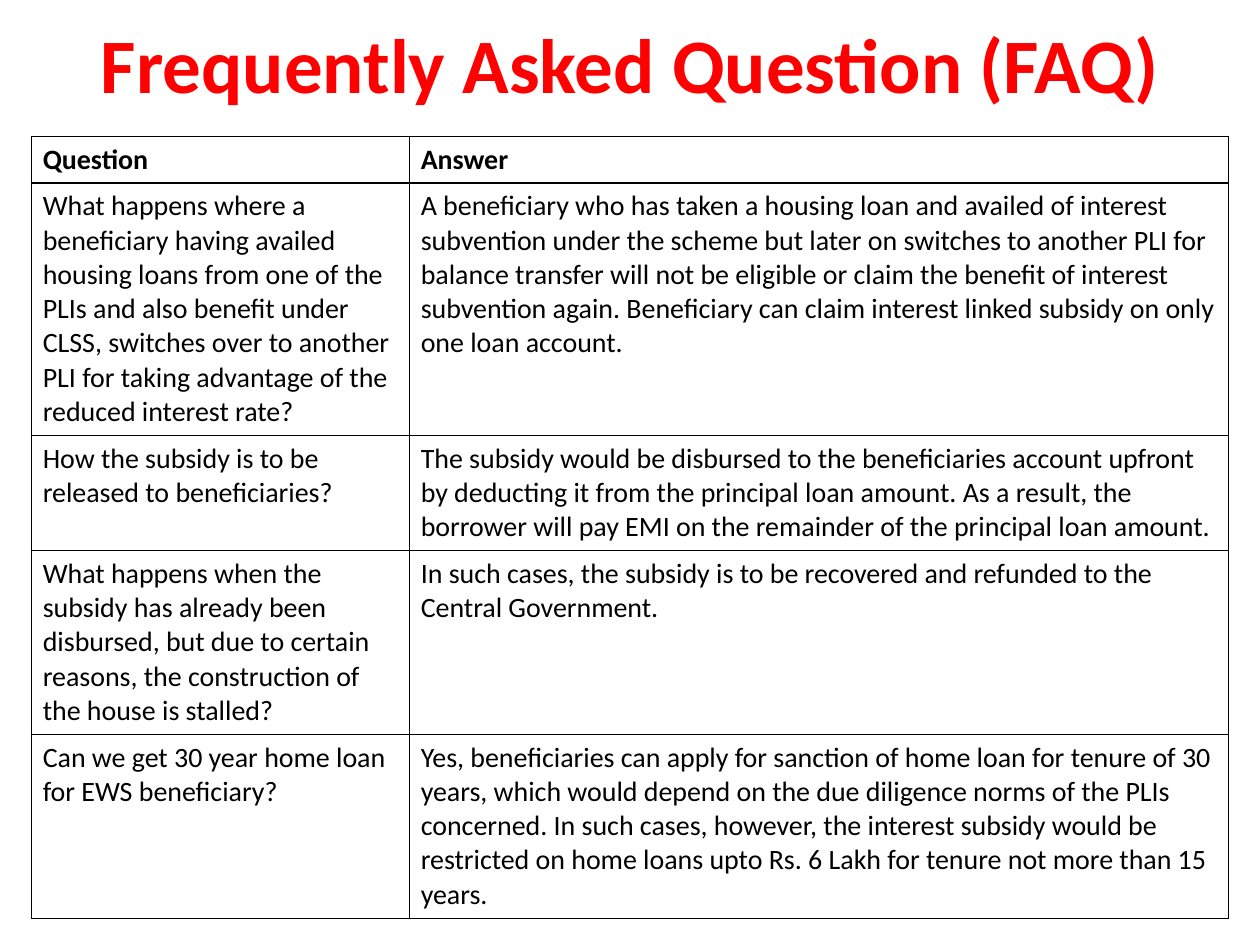
from dataclasses import dataclass

from lxml import etree
from pptx import Presentation, util as u
from pptx.dml.color import RGBColor
from pptx.enum import text
from pptx.oxml import ns


@dataclass(frozen=True)
class Theme:
    font: str = "Calibri"
    title_size: float = 44
    body_size: float = 16
    border_width: float = 0.75
    title_color: str = "FF0000"
    ink: str = "000000"
    paper: str = "FFFFFF"


theme = Theme()


def write(frame, words, size=theme.body_size, color=theme.ink, bold=False,
          align=text.PP_ALIGN.LEFT):
    frame.word_wrap = True
    para = frame.paragraphs[0]
    para.alignment = align
    span = para.add_run()
    span.text = words
    span.font.name = theme.font
    span.font.size = u.Pt(size)
    span.font.bold = bold
    span.font.color.rgb = RGBColor.from_string(color)


def add_borders(cell):
    properties = cell._tc.get_or_add_tcPr()
    for side in ("a:lnL", "a:lnR", "a:lnT", "a:lnB"):
        line = etree.SubElement(properties, ns.qn(side), w=str(u.Pt(theme.border_width)))
        fill = etree.SubElement(line, ns.qn("a:solidFill"))
        etree.SubElement(fill, ns.qn("a:srgbClr"), val=theme.ink)


faq = [
    ("Question", "Answer"),
    ("What happens where a beneficiary having availed housing loans from one of the PLIs "
     "and also benefit under CLSS, switches over to another PLI for taking advantage of "
     "the reduced interest rate?",
     "A beneficiary who has taken a housing loan and availed of interest subvention under "
     "the scheme but later on switches to another PLI for balance transfer will not be "
     "eligible or claim the benefit of interest subvention again. Beneficiary can claim "
     "interest linked subsidy on only one loan account."),
    ("How the subsidy is to be released to beneficiaries?",
     "The subsidy would be disbursed to the beneficiaries account upfront by deducting it "
     "from the principal loan amount. As a result, the borrower will pay EMI on the "
     "remainder of the principal loan amount."),
    ("What happens when the subsidy has already been disbursed, but due to certain "
     "reasons, the construction of the house is stalled?",
     "In such cases, the subsidy is to be recovered and refunded to the Central Government."),
    ("Can we get 30 year home loan for EWS beneficiary?",
     "Yes, beneficiaries can apply for sanction of home loan for tenure of 30 years, which "
     "would depend on the due diligence norms of the PLIs concerned. In such cases, however, "
     "the interest subsidy would be restricted on home loans upto Rs. 6 Lakh for tenure not "
     "more than 15 years."),
]
column_widths = [3, 6.5]
row_heights = [0.36, 1.96, 0.89, 1.42, 1.42]

deck = Presentation()
deck.slide_width, deck.slide_height = u.Inches(10), u.Inches(7.5)
page = deck.slides.add_slide(deck.slide_layouts.get_by_name("Title Only"))

title = page.shapes.title
title.left, title.top = u.Inches(0.17), u.Inches(0.08)
title.width, title.height = u.Inches(9.67), u.Inches(0.83)
frame = title.text_frame
frame.margin_left = frame.margin_right = u.Inches(0.09)
frame.margin_top = frame.margin_bottom = u.Inches(0.09)
frame.vertical_anchor = text.MSO_ANCHOR.MIDDLE
frame.auto_size = text.MSO_AUTO_SIZE.NONE
write(frame, "Frequently Asked Question (FAQ)", size=theme.title_size,
      color=theme.title_color, bold=True, align=text.PP_ALIGN.CENTER)

table = page.shapes.add_table(
    len(faq), len(column_widths), u.Inches(0.25), u.Inches(1.08),
    u.Inches(sum(column_widths)), u.Inches(sum(row_heights))).table
table.horz_banding = False
for column, width in zip(table.columns, column_widths):
    column.width = u.Inches(width)
for index, (row, height, entries) in enumerate(zip(table.rows, row_heights, faq)):
    row.height = u.Inches(height)
    for cell, words in zip(row.cells, entries):
        add_borders(cell)
        cell.fill.solid()
        cell.fill.fore_color.rgb = RGBColor.from_string(theme.paper)
        cell.margin_left = cell.margin_right = u.Inches(0.09)
        cell.margin_top = cell.margin_bottom = u.Inches(0.05)
        write(cell.text_frame, words, bold=index == 0)

deck.save("out.pptx")
